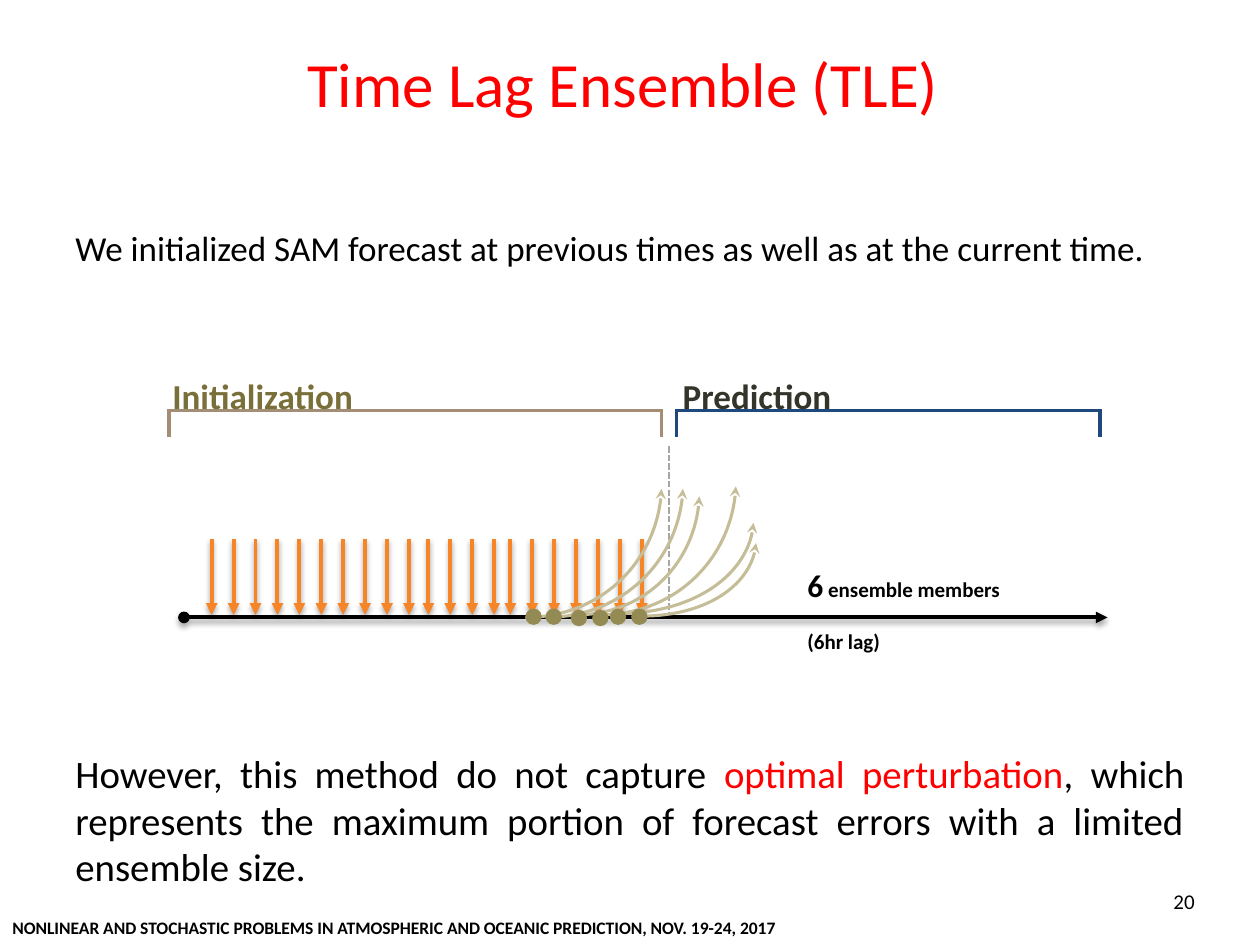
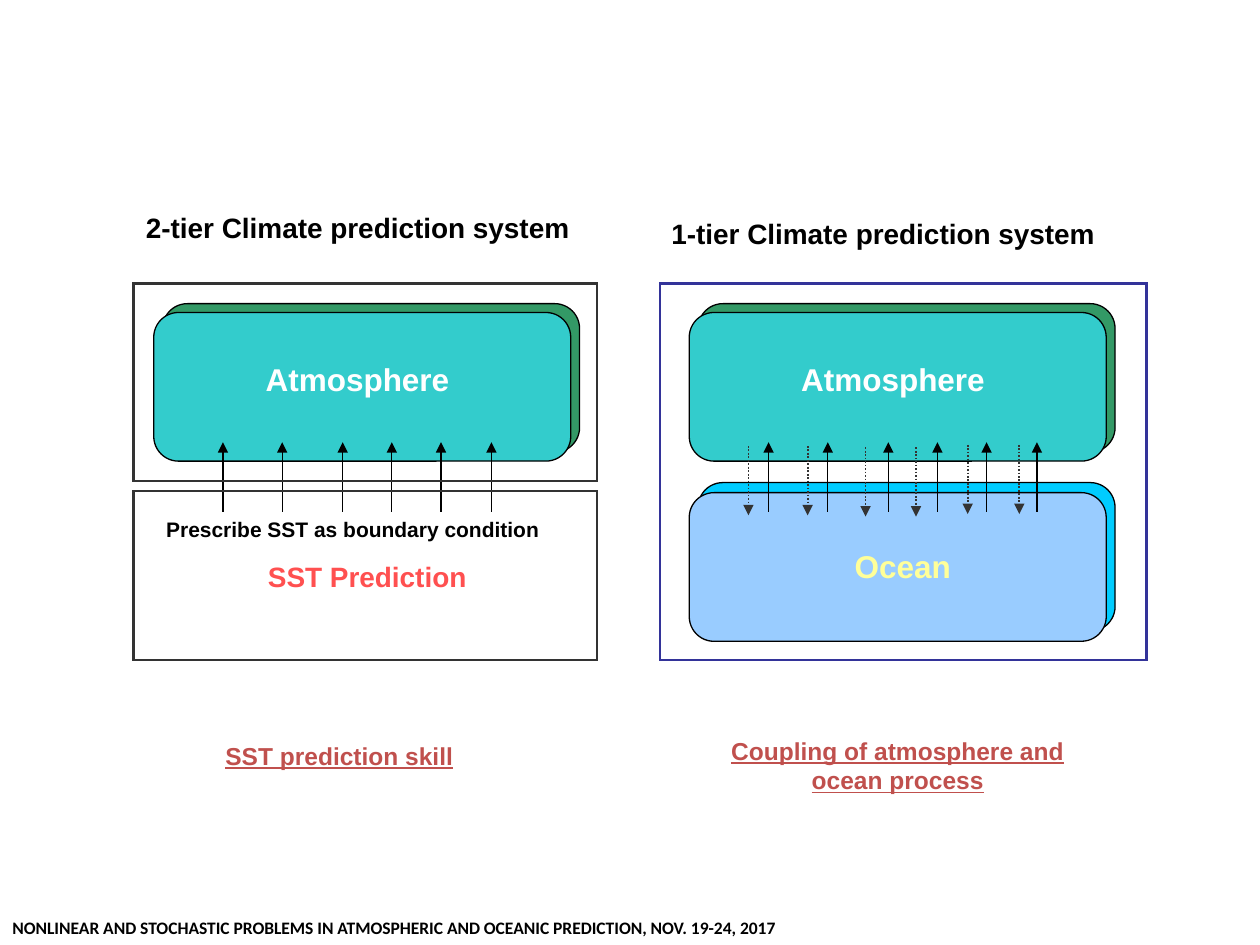
import lxml.etree
import pptx
import pptx.dml.color
import pptx.enum.shapes
import pptx.enum.text
import pptx.oxml.ns
import pptx.util

Inches = pptx.util.Inches
SHAPES = pptx.enum.shapes.MSO_SHAPE
ALIGN = pptx.enum.text.PP_ALIGN
ANCHOR = pptx.enum.text.MSO_ANCHOR
qn = pptx.oxml.ns.qn

# ---- Shared look ----
BLACK, RED, WHITE = "000000", "FF0000", "FFFFFF"
FOOTER = ("NONLINEAR AND STOCHASTIC PROBLEMS IN ATMOSPHERIC AND OCEANIC "
          "PREDICTION, NOV. 19-24, 2017")


def calibri(size, color=BLACK, bold=False):
    return {"name": "Calibri", "size": size, "bold": bold, "color": color}


def arial(size, color=BLACK, underline=False):
    return {"name": "Arial", "size": size, "bold": True, "color": color,
            "underline": underline}


# ---- Time lag slide: content ----
# Each text: box, paragraphs (lists of runs), paragraph format
TIME_LAG_TEXTS = [
    ((0.5, 0.3, 9, 1.25), [[("Time Lag Ensemble (TLE) ", calibri(36, RED))]],
     {"alignment": ALIGN.CENTER}),
    ((0.5, 1.75, 9, 0.92),
     [[("We initialized SAM forecast at previous times as well as at the current time.",
        calibri(20))]], {"alignment": ALIGN.JUSTIFY}),
    ((0.5, 5.9, 9, 1.2),
     [[("However, this method do not capture ", calibri(22.2)),
       ("optimal perturbation", calibri(22.2, RED)),
       (", which represents the maximum portion of forecast errors with a limited "
        "ensemble size. ", calibri(22.2))]],
     {"alignment": ALIGN.JUSTIFY}),
    ((1.27, 2.92, 1.7, 0.44), [[("Initialization", calibri(20, "796F39", True))]], {}),
    ((5.32, 2.92, 1.44, 0.44), [[("Prediction", calibri(20, "34352A", True))]], {}),
    ((6.31, 4.44, 1.78, 0.81),
     [[("6", calibri(18, bold=True)), (" ensemble members", calibri(12, bold=True))],
      [("(6hr lag)", calibri(12, bold=True))]], {"gap": 14.6}),
]
PAGE_NUMBER = ((7.25, 6.95, 2.33, 0.4), [[("20", calibri(12))]],
               {"alignment": ALIGN.RIGHT})
# Phase box, colour, white cover that leaves only the bracket
BRACKETS = [
    ((1.34, 3.26, 3.91, 0.57), "A38E75", (1.1, 3.48, 4.26, 0.41)),
    ((5.37, 3.26, 3.36, 0.57), "1F497D", (5.16, 3.48, 3.67, 0.41)),
]
TIMELINE_Y = 4.9
TIMELINE_PADS = [4.02, 4.57, 4.8]
# first x, number of arrows
OBSERVATION_RUNS = [(1.68, 10), (3.4, 4), (4.05, 7)]
OBSERVATION_STEP = 0.174
# start x, start y, end x, end y
FORECAST_CURVES = [
    (5.09, 4.89, 6, 4.31), (4.9, 4.87, 5.98, 4.15), (4.57, 4.88, 5.55, 3.94),
    (4.76, 4.88, 5.84, 3.86), (4.33, 4.9, 5.42, 3.88), (4.17, 4.9, 5.25, 3.88),
]
# Bezier controls and end, as shares of the width and height
CURVE_CONTROLS = [(0.54, 1), (0.98, 0.55), (1, 0)]
START_DOTS = [(4.84, 4.83), (5.01, 4.83), (4.53, 4.84), (4.7, 4.84),
              (4.17, 4.83), (4.33, 4.83)]
DOT_SIZE = 0.13

# ---- Prediction systems slide: content ----
# left, top, rise of the back card, back colour, front colour
CARDS = [
    (1.22, 2.48, 0.07, "339966", "33CCCC"),
    (5.47, 2.48, 0.07, "339966", "33CCCC"),
    (5.47, 3.91, 0.08, "00CCFF", "99CCFF"),
]
CARD_WIDTH, CARD_HEIGHT, CARD_SHIFT = 3.31, 1.18, 0.07
FRAMES = [
    ((5.24, 2.25, 3.86, 2.99), "333399"),
    ((1.06, 2.25, 3.68, 1.57), "333333"),
    ((1.06, 3.9, 3.68, 1.34), "333333"),
]
UPWARD_STARTS = [1.77, 6.1]
UPWARD_OFFSETS = [0, 0.47, 0.95, 1.34, 1.73, 2.13]
FLUX_LENGTH = 0.55
# x, top
DOWNWARD_FLUXES = [(5.94, 3.54), (6.41, 3.54), (6.87, 3.55),
                   (7.27, 3.55), (7.68, 3.53), (8.09, 3.53)]
CENTERED = {"alignment": ALIGN.CENTER}
SYSTEM_TEXTS = [
    ((1.06, 1.62, 3.7, 0.37), "2-tier Climate prediction system", arial(16), {}),
    ((5.23, 1.67, 3.87, 0.37), "1-tier Climate prediction system", arial(16), {}),
    ((2.01, 2.81, 1.81, 0.4), "Atmosphere", arial(18, WHITE), {}),
    ((6.26, 2.81, 1.81, 0.4), "Atmosphere", arial(18, WHITE), {}),
    ((6.26, 4.29, 1.81, 0.4), "Ocean", arial(18, "FFFF99"), CENTERED),
    ((1.22, 4.05, 3.38, 0.3), "Prescribe SST as boundary condition", arial(12), {}),
    ((2.01, 4.39, 1.81, 0.37), "SST Prediction", arial(16, "FF5050"), CENTERED),
    ((1.69, 5.83, 3.15, 0.33), "SST prediction skill", arial(14, "C0504D", True), {}),
    ((5.55, 5.79, 3.15, 0.57), "Coupling of atmosphere and ocean process",
     arial(14, "C0504D", True), CENTERED),
]


# ---- Helpers ----
def rgb(color):
    return pptx.dml.color.RGBColor.from_string(color)


def add_element(parent, tag, **attributes):
    element = lxml.etree.SubElement(parent, qn(tag))
    for name, value in attributes.items():
        element.set(name, str(value))
    return element


def add_text(slide, box, paragraphs, layout, wrap=True, anchor=ANCHOR.TOP):
    frame = slide.shapes.add_textbox(*map(Inches, box)).text_frame
    frame.word_wrap = wrap
    frame.vertical_anchor = anchor
    for index, runs in enumerate(paragraphs):
        paragraph = frame.add_paragraph() if index else frame.paragraphs[0]
        for name, value in layout.items():
            if name != "gap":
                setattr(paragraph, name, value)
            elif index:
                paragraph.space_before = pptx.util.Pt(value)
        for text, style in runs:
            run = paragraph.add_run()
            run.text = text
            for name, value in style.items():
                if name == "color":
                    run.font.color.rgb = rgb(value)
                else:
                    setattr(run.font, name,
                            pptx.util.Pt(value) if name == "size" else value)


def style_line(shape, color, width, dash=None, head=None, tail=None):
    shape.line.color.rgb = rgb(color)
    shape.line.width = pptx.util.Pt(width)
    line = shape.line._get_or_add_ln()
    if dash:
        add_element(line, "a:prstDash", val=dash)
    add_element(line, "a:miter", lim=800000)
    for tag, value in (("a:headEnd", head), ("a:tailEnd", tail)):
        if value:
            add_element(line, tag, type=value)


def add_line(slide, start, end, color, width, shadow=False, **ends):
    connector = slide.shapes.add_connector(
        pptx.enum.shapes.MSO_CONNECTOR.STRAIGHT, *map(Inches, start + end))
    style_line(connector, color, width, **ends)
    effects = add_element(connector._element.spPr, "a:effectLst")
    if shadow:
        outer = add_element(effects, "a:outerShdw", blurRad=39370, dist=22860,
                            dir=5400000, rotWithShape=0)
        add_element(add_element(outer, "a:srgbClr", val=BLACK), "a:alpha", val=35000)


def add_shape(slide, kind, box, fill=None, line=None, width=0.75):
    shape = slide.shapes.add_shape(kind, *map(Inches, box))
    shape.shadow.inherit = False
    if fill:
        shape.fill.solid()
        shape.fill.fore_color.rgb = rgb(fill)
    else:
        shape.fill.background()
    if line:
        style_line(shape, line, width)
    else:
        shape.line.fill.background()
    return shape


def add_curve(slide, start_x, start_y, end_x, end_y, color, width):
    builder = slide.shapes.build_freeform(Inches(start_x), Inches(start_y))
    builder.add_line_segments([(Inches(end_x), Inches(end_y))], close=False)
    shape = builder.convert_to_shape()
    shape.shadow.inherit = False
    shape.fill.background()
    style_line(shape, color, width, tail="stealth")

    # Bend the straight segment into a cubic curve
    segment = next(shape._element.iter(qn("a:lnTo")))
    outline = segment.getparent()
    outline.remove(segment)
    bend = add_element(outline, "a:cubicBezTo")
    for across, down in CURVE_CONTROLS:
        add_element(bend, "a:pt", x=round(across * shape.width),
                    y=round(down * shape.height))


def new_slide(presentation):
    slide = presentation.slides.add_slide(presentation.slide_layouts[6])
    add_text(slide, (0, 7.23, 10, 0.27), [[(FOOTER, calibri(10, bold=True))]], {})
    return slide


# ---- Slides ----
def build_time_lag(presentation):
    slide = new_slide(presentation)
    add_text(slide, *PAGE_NUMBER, anchor=ANCHOR.MIDDLE)

    # Phase brackets
    for box, color, cover in BRACKETS:
        add_shape(slide, SHAPES.RECTANGLE, box, line=color, width=2)
        add_shape(slide, SHAPES.RECTANGLE, cover, WHITE, WHITE, 2)

    # Timeline with observation arrows
    for left in TIMELINE_PADS:
        add_shape(slide, SHAPES.RECTANGLE, (left, 4.71, 0.36, 0.28), WHITE)
    add_line(slide, (1.46, TIMELINE_Y), (8.79, TIMELINE_Y), BLACK, 2.25,
             shadow=True, head="oval", tail="triangle")
    for first, count in OBSERVATION_RUNS:
        for index in range(count):
            x = first + index * OBSERVATION_STEP
            add_line(slide, (x, 4.28), (x, 4.88), "F68528", 2.25,
                     shadow=True, tail="triangle")
    add_line(slide, (5.31, 3.54), (5.31, 4.87), "A6A6A6", 1.25, dash="sysDash")

    # Lagged forecasts
    for curve in FORECAST_CURVES:
        add_curve(slide, *curve, "C4BD97", 1.75)
    for left, top in START_DOTS:
        add_shape(slide, SHAPES.OVAL, (left, top, DOT_SIZE, DOT_SIZE), "948A54")

    for box, paragraphs, layout in TIME_LAG_TEXTS:
        add_text(slide, box, paragraphs, layout, wrap=box[2] == 9)


def build_prediction_systems(presentation):
    slide = new_slide(presentation)

    # Stacked cards
    for left, top, rise, back, front in CARDS:
        for x, y, fill in ((left + CARD_SHIFT, top - rise, back), (left, top, front)):
            card = add_shape(slide, SHAPES.ROUNDED_RECTANGLE,
                             (x, y, CARD_WIDTH, CARD_HEIGHT), fill, BLACK)
            card.adjustments[0] = 0.167

    # Fluxes between the layers
    for start in UPWARD_STARTS:
        for offset in UPWARD_OFFSETS:
            x = start + offset
            add_line(slide, (x, 4.06), (x, 4.06 - FLUX_LENGTH), BLACK, 0.75,
                     tail="triangle")
    for x, top in DOWNWARD_FLUXES:
        add_line(slide, (x, top), (x, top + FLUX_LENGTH), "333333", 1,
                 dash="sysDot", tail="triangle")

    # Frames and labels
    for box, color in FRAMES:
        add_shape(slide, SHAPES.RECTANGLE, box, line=color, width=1.25)
    for box, text, style, layout in SYSTEM_TEXTS:
        add_text(slide, box, [[(text, style)]], layout)


def main():
    presentation = pptx.Presentation()
    presentation.slide_width = Inches(10)
    presentation.slide_height = Inches(7.5)
    build_time_lag(presentation)
    build_prediction_systems(presentation)
    presentation.save("out.pptx")


if __name__ == "__main__":
    main()
